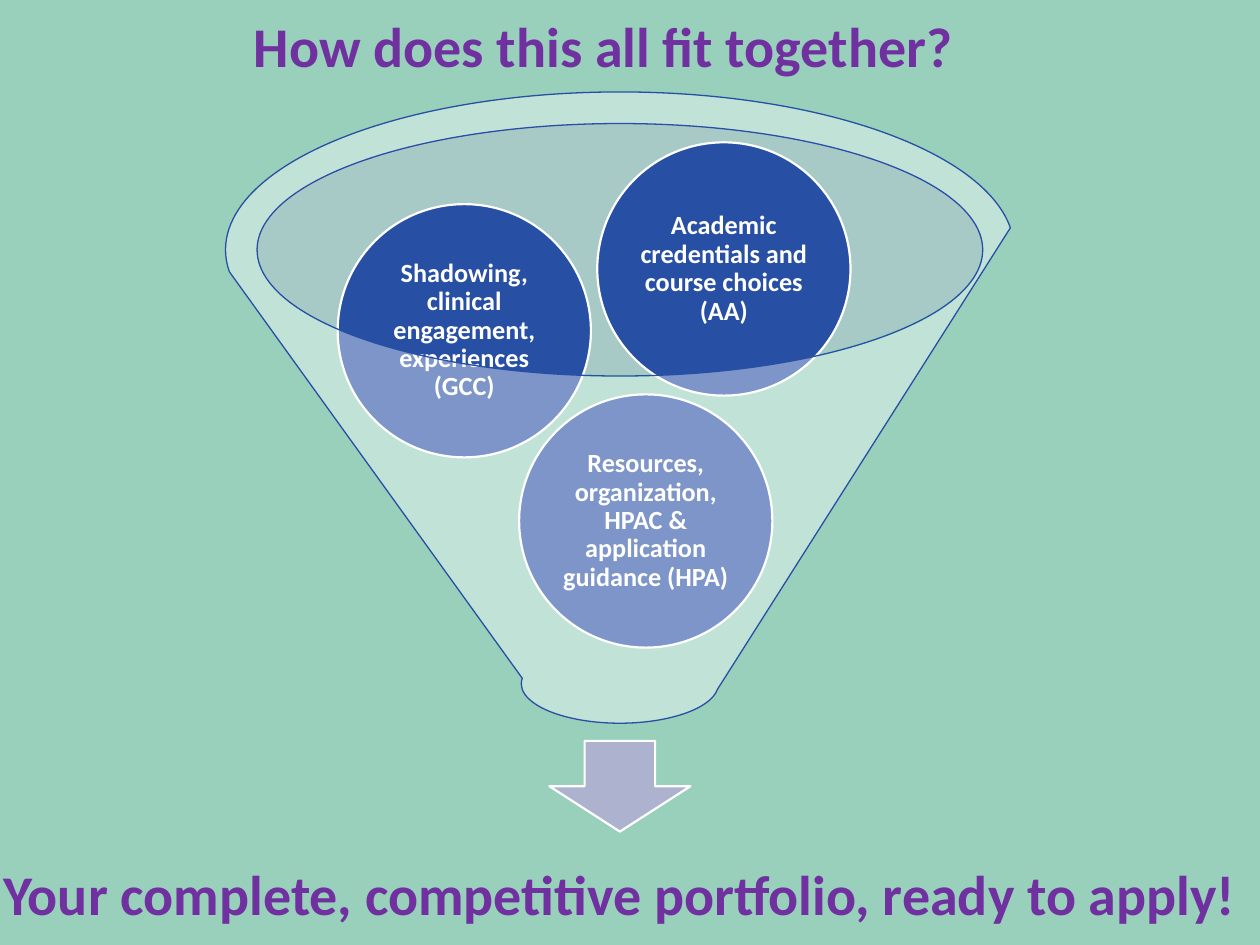
from lxml import etree
from pptx import Presentation
from pptx.dml.color import RGBColor
from pptx.enum.shapes import MSO_SHAPE
from pptx.enum.text import MSO_ANCHOR, PP_ALIGN
from pptx.oxml.ns import qn
from pptx.util import Inches, Pt

MINT = RGBColor(0x98, 0xD0, 0xBC)
PURPLE = RGBColor(0x70, 0x30, 0xA0)
BLUE = RGBColor(0x27, 0x4F, 0xA4)
LAVENDER = RGBColor(0xAD, 0xB3, 0xCF)
PALE_LAVENDER = RGBColor(0xBE, 0xC2, 0xD8)
WHITE = RGBColor(0xFF, 0xFF, 0xFF)

TITLE = "How does this all fit together?"
OUTCOME = "Your complete, competitive portfolio, ready to apply!"
DIAMETER = 2.01
INGREDIENTS = [  # text, left, top
    ("Resources, organization, HPAC & application guidance (HPA)", 4.12, 3.13),
    ("Shadowing, clinical engagement, experiences (GCC)", 2.68, 1.62),
    ("Academic credentials and course choices (AA)", 4.74, 1.13),
]


def add_filled(slide, kind, box, fill, line=None, width=1.25, opacity=None):
    """Add a preset shape; opacity is a percentage of the fill."""
    shape = slide.shapes.add_shape(kind, *map(Inches, box))
    shape.shadow.inherit = False
    shape.fill.solid()
    shape.fill.fore_color.rgb = fill
    if opacity is not None:
        color = shape.fill._xPr.find(qn("a:solidFill"))[0]
        etree.SubElement(color, qn("a:alpha")).set("val", str(opacity * 1000))
    if line is None:
        shape.line.fill.background()
    else:
        shape.line.color.rgb = line
        shape.line.width = Pt(width)
    return shape


def write(shape, text, size, color, inset=None, anchor=MSO_ANCHOR.MIDDLE, spacing=0.9):
    frame = shape.text_frame
    frame.word_wrap = True
    frame.vertical_anchor = anchor
    if inset is not None:
        frame.margin_left = frame.margin_right = Inches(inset)
        frame.margin_top = frame.margin_bottom = Inches(inset)
    paragraph = frame.paragraphs[0]
    paragraph.text = text
    paragraph.alignment = PP_ALIGN.CENTER
    paragraph.line_spacing = spacing
    font = paragraph.font
    font.name, font.size, font.bold = "Calibri", Pt(size), True
    font.color.rgb = color


def add_text(slide, box, *args, **options):
    write(slide.shapes.add_textbox(*map(Inches, box)), *args, **options)


def main():
    presentation = Presentation()
    presentation.slide_width, presentation.slide_height = Inches(10), Inches(7.5)
    slide = presentation.slides.add_slide(presentation.slide_layouts[6])
    slide.background.fill.solid()
    slide.background.fill.fore_color.rgb = MINT

    add_text(slide, (1.5, 0.04, 6.58, 0.64), TITLE, 32, PURPLE,
             anchor=MSO_ANCHOR.TOP, spacing=1.0)
    add_filled(slide, MSO_SHAPE.OVAL, (2.03, 0.97, 5.77, 2), PALE_LAVENDER, opacity=40)
    add_filled(slide, MSO_SHAPE.DOWN_ARROW, (4.36, 5.88, 1.12, 0.72), LAVENDER, WHITE)
    add_text(slide, (-0.3, 6.45, 10.44, 1.34), OUTCOME, 32, PURPLE, inset=0.25)

    for text, left, top in INGREDIENTS:
        circle = add_filled(slide, MSO_SHAPE.OVAL, (left, top, DIAMETER, DIAMETER),
                            BLUE, WHITE)
        write(circle, text, 15, WHITE, inset=0.02)

    add_filled(slide, MSO_SHAPE.FUNNEL, (1.79, 0.73, 6.26, 5.01), WHITE, BLUE,
               width=0.75, opacity=40)
    presentation.save("out.pptx")


if __name__ == "__main__":
    main()
